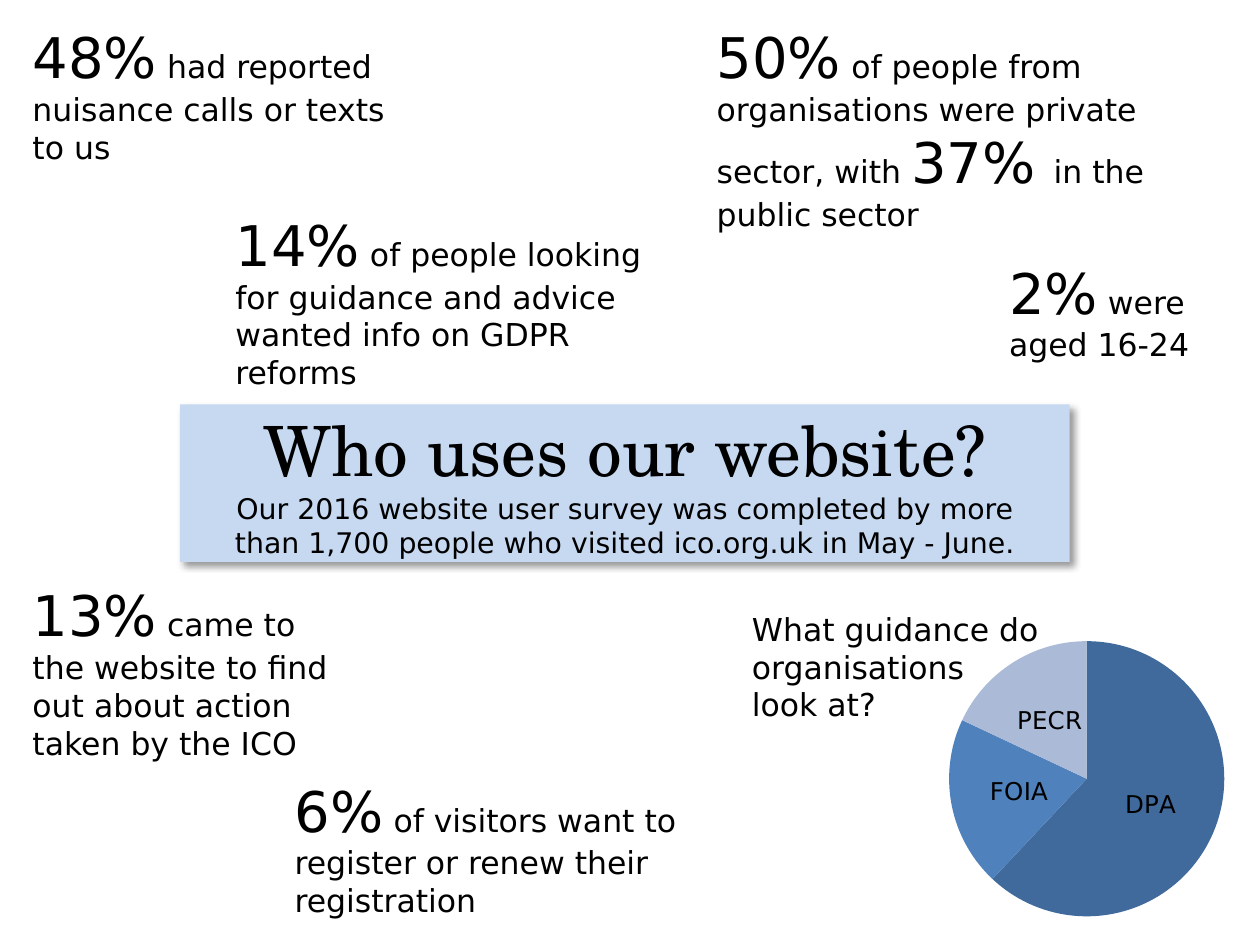
import lxml.etree
import pptx
import pptx.chart.data
import pptx.dml.color
import pptx.enum.chart
import pptx.enum.shapes
import pptx.enum.text
import pptx.oxml.ns
import pptx.util

RGB = pptx.dml.color.RGBColor
BLACK = RGB(0, 0, 0)
PALE_BLUE = RGB(0xC6, 0xD9, 0xF1)
SLICES = [RGB(0x41, 0x6A, 0x9C), RGB(0x4F, 0x81, 0xBD), RGB(0xAA, 0xBA, 0xD7)]
ANCHOR = pptx.enum.text.MSO_ANCHOR
ALIGN = pptx.enum.text.PP_ALIGN
BODY_FONT = "DejaVu Sans"
TITLE_FONT = "TeX Gyre Schola"
BIG, BODY, LABEL = 32, 18, 14
COLUMNS, ROWS = 100, 75


class Board:
    def __init__(self, prs):
        self.s = prs.slides.add_slide(prs.slide_layouts[6])
        self.column = prs.slide_width / COLUMNS
        self.row = prs.slide_height / ROWS

    def place(self, x, y, w, h):
        return (int(x * self.column), int(y * self.row),
                int(w * self.column), int(h * self.row))

    def style(self, font, size, name=BODY_FONT):
        values = {"size": pptx.util.Pt(size), "name": name, "bold": False}
        for key, value in values.items():
            setattr(font, key, value)
        font.color.rgb = BLACK

    def add_runs(self, p, runs):
        for text, *look in runs:
            for i, line in enumerate(text.split("\n")):
                if i:
                    p.add_line_break()
                if line:
                    r = p.add_run()
                    r.text = line
                    self.style(r.font, *look)

    def note(self, at, *paragraphs, top=0.5):
        tf = self.s.shapes.add_textbox(*self.place(*at)).text_frame
        values = {"word_wrap": True, "margin_top": int(top * self.row),
                  "auto_size": pptx.enum.text.MSO_AUTO_SIZE.SHAPE_TO_FIT_TEXT}
        for key, value in values.items():
            setattr(tf, key, value)
        for i, runs in enumerate(paragraphs):
            self.add_runs(tf.add_paragraph() if i else tf.paragraphs[0], runs)

    def banner(self, at, runs):
        sp = self.s.shapes.add_shape(
            pptx.enum.shapes.MSO_SHAPE.RECTANGLE, *self.place(*at))
        sp.fill.solid()
        sp.fill.fore_color.rgb = PALE_BLUE
        sp.line.fill.background()
        self.drop_shadow(sp)
        tf = sp.text_frame
        tf.word_wrap = True
        tf.vertical_anchor = ANCHOR.MIDDLE
        p = tf.paragraphs[0]
        p.alignment = ALIGN.CENTER
        self.add_runs(p, runs)

    def drop_shadow(self, sp):
        qn = pptx.oxml.ns.qn
        sp.shadow.inherit = False
        effects = sp._element.spPr.find(qn("a:effectLst"))
        shadow = lxml.etree.SubElement(
            effects, qn("a:outerShdw"), blurRad=str(pptx.util.Pt(4)),
            dist=str(pptx.util.Pt(3)), dir="2700000", algn="tl", rotWithShape="0")
        color = lxml.etree.SubElement(shadow, qn("a:srgbClr"), val=str(BLACK))
        lxml.etree.SubElement(color, qn("a:alpha"), val="40000")

    def pie(self, at, shares, plot):
        data = pptx.chart.data.CategoryChartData()
        data.categories = list(shares)
        data.add_series("Series 1", list(shares.values()))
        chart = self.s.shapes.add_chart(
            pptx.enum.chart.XL_CHART_TYPE.PIE, *self.place(*at), data).chart
        chart.has_legend = False
        chart.has_title = False
        self.style(chart.font, BODY, "Calibri")
        pie = chart.plots[0]
        pie.vary_by_categories = True
        for i, color in enumerate(SLICES):
            fill = pie.series[0].points[i].format.fill
            fill.solid()
            fill.fore_color.rgb = color
        pie.has_data_labels = True
        labels = pie.data_labels
        values = {"show_category_name": True, "show_value": False,
                  "show_percentage": False,
                  "position": pptx.enum.chart.XL_LABEL_POSITION.CENTER}
        for key, value in values.items():
            setattr(labels, key, value)
        self.style(labels.font, LABEL)
        self.fix_plot(chart, plot)

    def fix_plot(self, chart, plot):
        qn = pptx.oxml.ns.qn
        area = chart._chartSpace.find(".//" + qn("c:plotArea"))
        layout = area.find(qn("c:layout"))
        if layout is None:
            layout = lxml.etree.Element(qn("c:layout"))
            area.insert(0, layout)
        manual = lxml.etree.SubElement(layout, qn("c:manualLayout"))
        values = {"layoutTarget": "inner", "xMode": "edge", "yMode": "edge",
                  **dict(zip("xywh", plot))}
        for key, value in values.items():
            lxml.etree.SubElement(manual, qn("c:" + key), val=str(value))


def main():
    prs = pptx.Presentation()
    prs.slide_width = pptx.util.Inches(10)
    prs.slide_height = pptx.util.Inches(7.5)
    board = Board(prs)
    board.banner((14.3, 32.1, 70.6, 12.5), [
        ("Who uses our website?\n", 39.6, TITLE_FONT),
        ("Our 2016 website user survey was completed by more\n"
         "than 1,700 people who visited ico.org.uk in May - June.", 16.2)])
    board.note((58.7, 47.9, 40.3, 10.1),
               [("What guidance do\norganisations\nlook at?", BODY)])
    board.note((17.7, 16.2, 37, 15.5), [
        ("14%", BIG),
        (" of people looking\nfor guidance and advice\n"
         "wanted info on GDPR reforms", BODY)])
    board.note((1.6, 45.6, 37, 15.5), [
        ("13%", BIG),
        (" came to \nthe website to find\nout about action\n"
         "taken by the ICO", BODY)])
    board.note((1.6, 1.3, 32.7, 12.5), [
        ("48%", BIG), (" had reported\nnuisance calls or texts\nto us", BODY)])
    board.pie((69.7, 47.7, 33.1, 28.8), {"DPA": 62, "FOIA": 20, "PECR": 18},
              (0.17, 0.11, 0.66, 0.76))
    board.note((22.4, 58.1, 37, 15.5), [
        ("6%", BIG),
        (" of visitors want to register or renew their registration", BODY)],
        top=3.5)
    board.note((55.9, 1.3, 37, 17.8), [
        ("50%", BIG),
        (" of people from organisations were private\nsector, with ", BODY),
        ("37% ", BIG), ("in the\npublic sector", BODY)])
    board.note((79.1, 20, 18.5, 9.4),
               [("2%", BIG), (" were", BODY)], [("aged 16-24", BODY)])
    prs.save("out.pptx")


if __name__ == "__main__":
    main()
